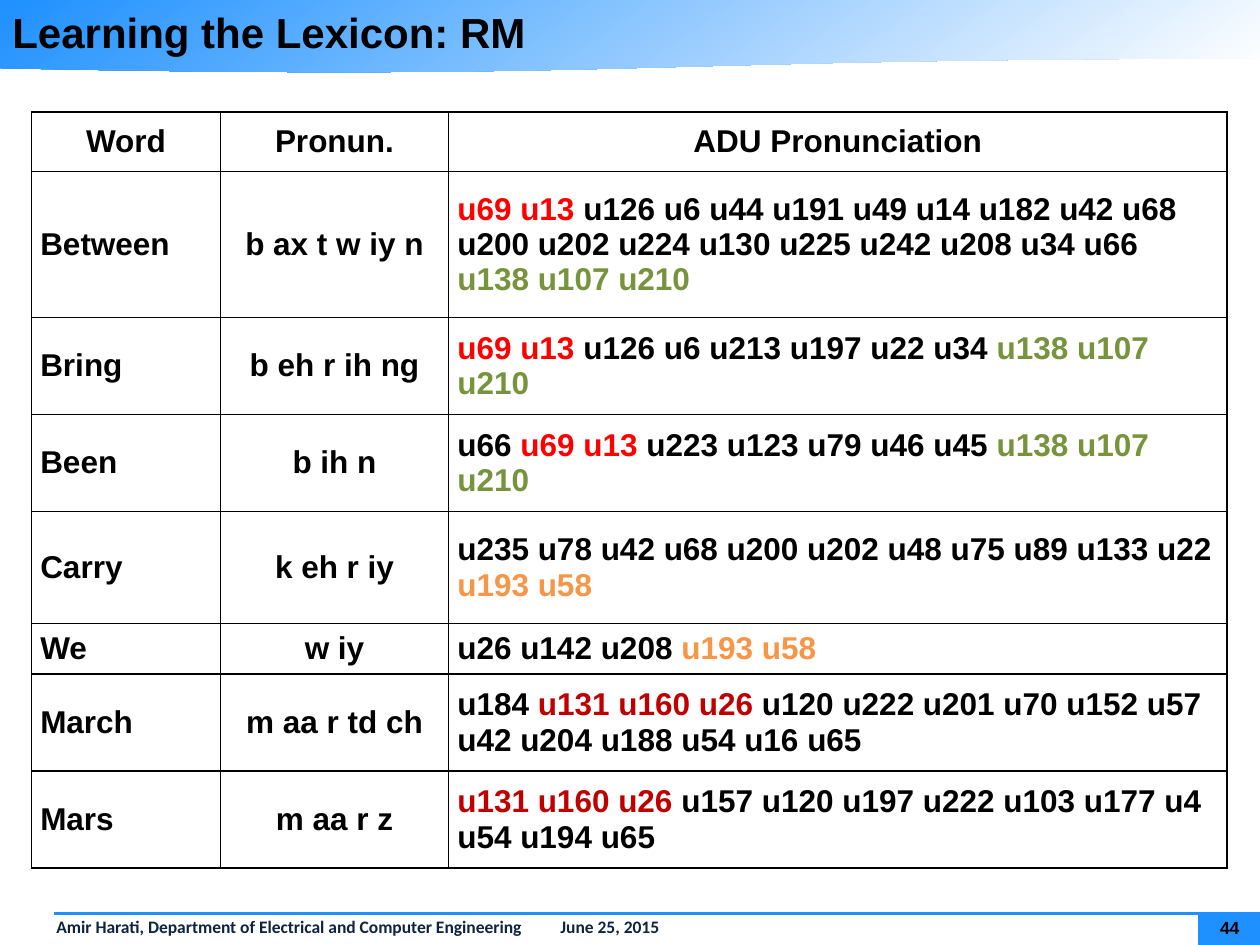
from dataclasses import dataclass

from lxml.etree import SubElement
from pptx import Presentation
from pptx.dml.color import RGBColor
from pptx.enum.dml import MSO_LINE
from pptx.enum.shapes import MSO_CONNECTOR, MSO_SHAPE
from pptx.enum.text import MSO_ANCHOR, PP_ALIGN
from pptx.oxml import parse_xml
from pptx.oxml.ns import nsdecls, qn
from pptx.util import Inches, Pt

COLORS = {
    "black": "000000", "white": "FFFFFF", "blue": "1E90FF", "navy": "0F243E",
    "red": "FF0000", "green": "77933C", "orange": "F79646", "crimson": "C00000",
}
# Unit sequences shared between words, with their highlight colour
MOTIFS = {
    "u69 u13": "red", "u138 u107 u210": "green",
    "u193 u58": "orange", "u131 u160 u26": "crimson",
}
COLUMN_WIDTHS = [1.5, 1.81, 6.18]
HEADER_HEIGHT = 0.47
CELL_FORMAT = {
    "vertical_anchor": MSO_ANCHOR.MIDDLE,
    "margin_left": Inches(0.07), "margin_right": Inches(0.07),
    "margin_top": Inches(0.05), "margin_bottom": Inches(0.05),
}
PAGE_FORMAT = {
    "vertical_anchor": MSO_ANCHOR.MIDDLE,
    "margin_left": 0, "margin_right": 0, "margin_top": 0, "margin_bottom": 0,
}


@dataclass
class Entry:
    word: str
    phones: str
    units: str
    height: float


LEXICON = [
    Entry("Between", "b ax t w iy n",
          "u69 u13 u126 u6 u44 u191 u49 u14 u182 u42 u68 u200 u202 u224 u130 "
          "u225 u242 u208 u34 u66 u138 u107 u210", 1.16),
    Entry("Bring", "b eh r ih ng",
          "u69 u13 u126 u6 u213 u197 u22 u34 u138 u107 u210", 0.77),
    Entry("Been", "b ih n",
          "u66 u69 u13 u223 u123 u79 u46 u45 u138 u107 u210", 0.77),
    Entry("Carry", "k eh r iy",
          "u235 u78 u42 u68 u200 u202 u48 u75 u89 u133 u22 u193 u58", 0.89),
    Entry("We", "w iy", "u26 u142 u208 u193 u58", 0.39),
    Entry("March", "m aa r td ch",
          "u184 u131 u160 u26 u120 u222 u201 u70 u152 u57 u42 u204 u188 u54 "
          "u16 u65", 0.77),
    Entry("Mars", "m aa r z",
          "u131 u160 u26 u157 u120 u197 u222 u103 u177 u4 u54 u194 u65", 0.77),
]


def rgb(name: str) -> RGBColor:
    return RGBColor.from_string(COLORS[name])


def apply_format(target, values: dict) -> None:
    for name, value in values.items():
        setattr(target, name, value)


def add_run(paragraph, text: str, size: float, color: str = "black",
            font: str = "Arial") -> None:
    run = paragraph.add_run()
    run.text = text
    apply_format(run.font, {"size": Pt(size), "name": font, "bold": True})
    run.font.color.rgb = rgb(color)


def split_motifs(units: str) -> list[tuple[str, str]]:
    """Cut a unit string into (text, colour) pieces."""
    for motif, color in MOTIFS.items():
        before, found, after = units.partition(motif)
        if found:
            return split_motifs(before) + [(found, color)] + split_motifs(after)
    return [(units, "black")] if units else []


def add_band(slide, preset, left: float, top: float, width: float, height: float):
    band = slide.shapes.add_shape(preset, Inches(left), Inches(top),
                                  Inches(width), Inches(height))
    band.shadow.inherit = False
    band.line.fill.background()
    return band


def add_label(slide, left: float, top: float, width: float, height: float):
    frame = slide.shapes.add_textbox(Inches(left), Inches(top), Inches(width),
                                     Inches(height)).text_frame
    frame.word_wrap = True
    return frame


def add_borders(cell) -> None:
    properties = cell._tc.get_or_add_tcPr()
    for position, side in enumerate(("lnL", "lnR", "lnT", "lnB")):
        properties.insert(position, parse_xml(
            f'<a:{side} {nsdecls("a")} w="{Pt(1)}"><a:solidFill>'
            f'<a:srgbClr val="{COLORS["black"]}"/></a:solidFill></a:{side}>'))


def fill_cell(cell, pieces: list[tuple[str, str]], centered: bool) -> None:
    apply_format(cell, CELL_FORMAT)
    cell.fill.background()
    add_borders(cell)
    paragraph = cell.text_frame.paragraphs[0]
    paragraph.alignment = PP_ALIGN.CENTER if centered else PP_ALIGN.LEFT
    for text, color in pieces:
        add_run(paragraph, text, 18, color)


def add_lexicon(slide) -> None:
    heights = [HEADER_HEIGHT] + [entry.height for entry in LEXICON]
    lexicon = slide.shapes.add_table(
        len(heights), len(COLUMN_WIDTHS), Inches(0.25), Inches(0.89),
        Inches(sum(COLUMN_WIDTHS)), Inches(sum(heights))).table
    apply_format(lexicon, {"first_row": False, "horz_banding": False})
    for column, width in zip(lexicon.columns, COLUMN_WIDTHS):
        column.width = Inches(width)
    for row, height in zip(lexicon.rows, heights):
        row.height = Inches(height)

    rows = [("Word", "Pronun.", "ADU Pronunciation")]
    rows += [(entry.word, entry.phones, entry.units) for entry in LEXICON]
    for r, texts in enumerate(rows):
        for c, text in enumerate(texts):
            fill_cell(lexicon.cell(r, c), split_motifs(text), r == 0 or c == 1)


def add_footer(slide) -> None:
    page_block = add_band(slide, MSO_SHAPE.RECTANGLE, 9.51, 7.24, 0.5, 0.26)
    page_block.fill.solid()
    page_block.fill.fore_color.rgb = rgb("blue")

    # Author on the left, date at a right tab
    credit = add_label(slide, 0.04, 7.23, 9.97, 0.26).paragraphs[0]
    credit.line_spacing = 0.95
    indents = credit._p.get_or_add_pPr()
    indents.set("marL", str(Inches(0.31)))
    indents.set("indent", "0")
    tabs = SubElement(indents, qn("a:tabLst"))
    SubElement(tabs, qn("a:tab"), pos=str(Inches(9.31)), algn="r")
    add_run(credit, "Amir Harati, Department of Electrical and Computer "
            "Engineering\tJune 25, 2015", 10, "navy", "Calibri")

    rule = slide.shapes.add_connector(MSO_CONNECTOR.STRAIGHT, Inches(0.43),
                                      Inches(7.25), Inches(10), Inches(7.25))
    apply_format(rule.line, {"width": Pt(1.5), "dash_style": MSO_LINE.SOLID})
    rule.line.color.rgb = rgb("blue")
    SubElement(rule._element.spPr, qn("a:effectLst"))

    page = add_label(slide, 9.56, 7.28, 0.4, 0.17)
    apply_format(page, PAGE_FORMAT)
    page.paragraphs[0].alignment = PP_ALIGN.CENTER
    add_run(page.paragraphs[0], "44", 10)


def main() -> None:
    deck = Presentation()
    apply_format(deck, {"slide_width": Inches(10), "slide_height": Inches(7.5)})
    slide = deck.slides.add_slide(deck.slide_layouts[6])

    # Header band
    header = add_band(slide, MSO_SHAPE.FLOWCHART_DOCUMENT, 0, 0, 10.01, 0.58)
    header.fill.gradient()
    header.fill.gradient_angle = 360 - 55
    for stop, color in zip(header.fill.gradient_stops, ("blue", "white")):
        stop.color.rgb = rgb(color)

    add_footer(slide)
    add_lexicon(slide)

    # Title
    title = add_label(slide, 0, 0, 10, 0.43)
    add_run(title.paragraphs[0], "Learning the Lexicon: RM", 24)
    deck.save("out.pptx")


if __name__ == "__main__":
    main()
